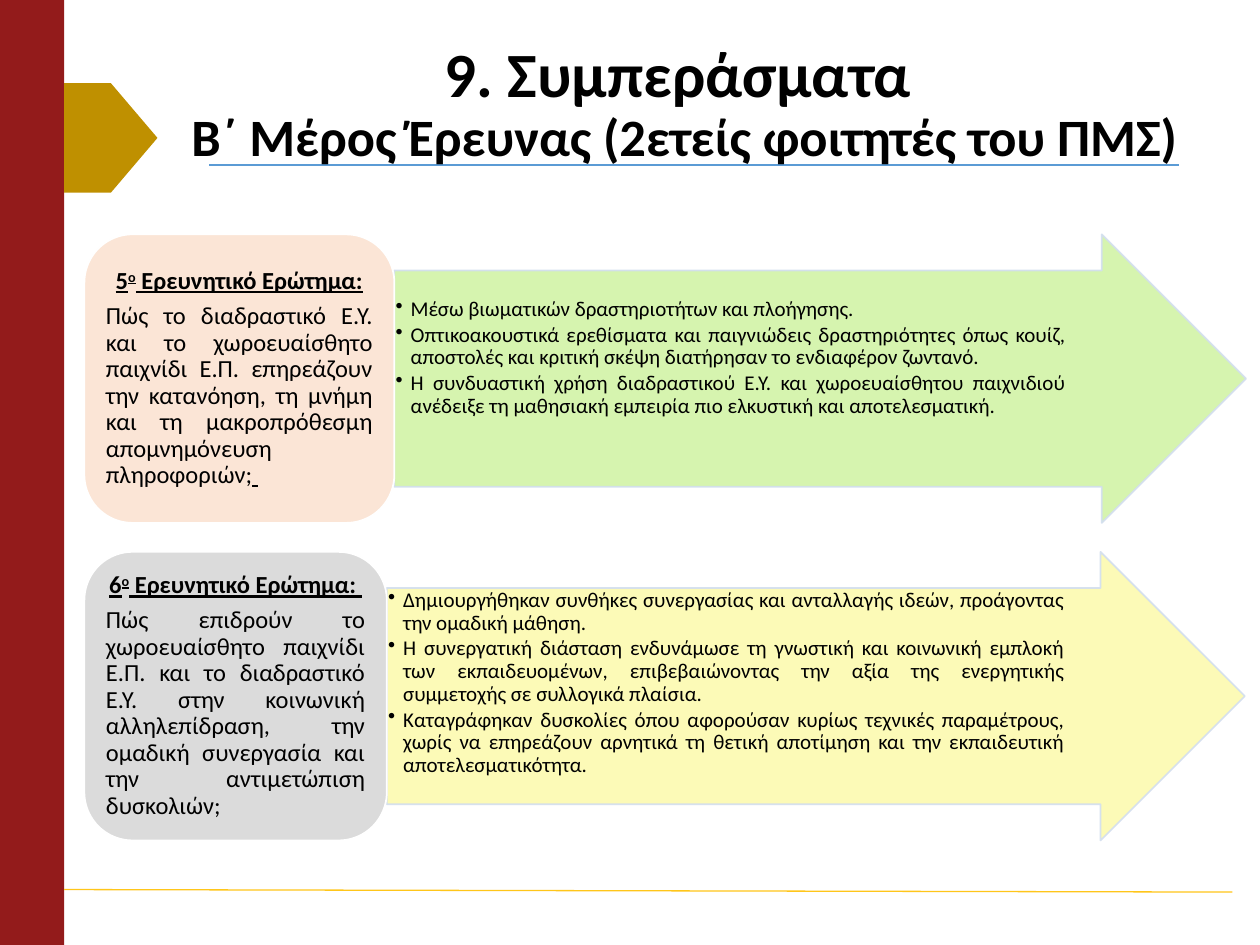
from lxml.etree import SubElement
from pptx import Presentation
from pptx.dml.color import RGBColor
from pptx.enum.shapes import MSO_CONNECTOR, MSO_SHAPE as SHAPE
from pptx.enum.text import MSO_ANCHOR as ANCHOR, PP_ALIGN as ALIGN
from pptx.oxml.ns import qn
from pptx.util import Inches, Pt

WIDTH, HEIGHT = Inches(10), Inches(7.5)
COLS, ROWS = 100, 75
CARD_LEFT, CARD_HEIGHT = 6.7, 22.9
FIRST_ROW, ROW_STEP = 18.6, 25.2

QUESTIONS = [
    {
        "number": "5",
        "heading": " Ερευνητικό Ερώτημα:",
        "question": "Πώς το διαδραστικό Ε.Υ. και το χωροευαίσθητο παιχνίδι Ε.Π. επηρεάζουν την κατανόηση, τη μνήμη και τη μακροπρόθεσμη απομνημόνευση πληροφοριών;",
        "tail": " ",
        "findings": [
            "Μέσω βιωματικών δραστηριοτήτων και πλοήγησης.",
            "Οπτικοακουστικά ερεθίσματα και παιγνιώδεις δραστηριότητες όπως κουίζ, αποστολές και κριτική σκέψη διατήρησαν το ενδιαφέρον ζωντανό.",
            "Η συνδυαστική χρήση διαδραστικού Ε.Υ. και χωροευαίσθητου παιχνιδιού ανέδειξε τη μαθησιακή εμπειρία πιο ελκυστική και αποτελεσματική.",
        ],
        "split": 31.3, "tip": 98.9, "top_inset": 0.22,
        "card": "FBE5D6", "arrow": "D2F3A7",
    },
    {
        "number": "6",
        "heading": " Ερευνητικό Ερώτημα: ",
        "question": "Πώς επιδρούν το χωροευαίσθητο παιχνίδι Ε.Π. και το διαδραστικό Ε.Υ. στην κοινωνική αλληλεπίδραση, την ομαδική συνεργασία και την αντιμετώπιση δυσκολιών;",
        "tail": "",
        "findings": [
            "Δημιουργήθηκαν συνθήκες συνεργασίας και ανταλλαγής ιδεών, προάγοντας την ομαδική μάθηση.",
            "Η συνεργατική διάσταση ενδυνάμωσε τη γνωστική και κοινωνική εμπλοκή των εκπαιδευομένων, επιβεβαιώνοντας την αξία της ενεργητικής συμμετοχής σε συλλογικά πλαίσια.",
            "Καταγράφηκαν δυσκολίες όπου αφορούσαν κυρίως τεχνικές παραμέτρους, χωρίς να επηρεάζουν αρνητικά τη θετική αποτίμηση και την εκπαιδευτική αποτελεσματικότητα.",
        ],
        "split": 30.7, "tip": 98.8, "top_inset": 0.01,
        "card": "DBDBDB", "arrow": "FCFAB0",
    },
]


def col(n):
    return round(WIDTH * n / COLS)


def row(n):
    return round(HEIGHT * n / ROWS)


def box(left, top, width, height):
    return col(left), row(top), col(width), row(height)


def paint(color_format, value, alpha=None):
    color_format.rgb = RGBColor.from_string(value)
    if alpha:
        color = color_format._xFill.find(qn("a:srgbClr"))
        SubElement(color, qn("a:alpha")).set("val", str(alpha * 1000))


def add_block(slide, kind, area, fill, line=None, alpha=None):
    sp = slide.shapes.add_shape(kind, *box(*area))
    sp.shadow.inherit = False
    sp.fill.solid()
    paint(sp.fill.fore_color, fill, alpha)
    if line:
        sp.line.width = Pt(1)
        sp.line.fill.solid()
        paint(sp.line.fill.fore_color, line, alpha)
    else:
        sp.line.fill.background()
    return sp


def add_rule(slide, start, end, color):
    line = slide.shapes.add_connector(
        MSO_CONNECTOR.STRAIGHT, col(start[0]), row(start[1]), col(end[0]), row(end[1]))
    line.line.width = Pt(0.75)
    line.line.fill.solid()
    paint(line.line.fill.fore_color, color)
    SubElement(line._element.spPr, qn("a:effectLst"))


def set_frame(tf, anchor, left, top, right, bottom):
    tf.word_wrap = True
    tf.vertical_anchor = anchor
    tf.margin_left, tf.margin_top = Inches(left), Inches(top)
    tf.margin_right, tf.margin_bottom = Inches(right), Inches(bottom)


def format_run(r, size, bold=False, underline=False):
    r.font.name = "Calibri"
    r.font.size = Pt(size)
    r.font.bold = bold
    r.font.underline = underline
    r.font.fill.solid()
    paint(r.font.fill.fore_color, "000000")


def format_paragraph(p, align, after=0):
    p.alignment = align
    p.line_spacing = 0.9
    p.space_after = Pt(after)


def add_bullet(p):
    pPr = p._p.get_or_add_pPr()
    pPr.set("marL", str(Inches(0.12)))
    pPr.set("indent", str(-Inches(0.12)))
    SubElement(pPr, qn("a:buChar")).set("char", "•")


def add_title(slide):
    tf = slide.shapes.add_textbox(*box(13.8, 6, 81.1, 4.7)).text_frame
    set_frame(tf, ANCHOR.MIDDLE, 0.1, 0.05, 0.1, 0.05)
    tf.text = "9. Συμπεράσματα \vΒ΄ Μέρος Έρευνας (2ετείς φοιτητές του ΠΜΣ)"
    p = tf.paragraphs[0]
    format_paragraph(p, ALIGN.CENTER)
    for r, size in zip(p.runs, (36, 30)):
        format_run(r, size, bold=True)


def add_findings(slide, item, top):
    left = item["split"]
    area = (left, top, item["tip"] - left, CARD_HEIGHT)
    sp = add_block(slide, SHAPE.RIGHT_ARROW, area, item["arrow"], "D2DEEF", 90)
    sp.adjustments[0], sp.adjustments[1] = 0.75, 0.5
    tf = sp.text_frame
    set_frame(tf, ANCHOR.TOP, 0.01, item["top_inset"], 0.57, 0.01)
    tf.text = "\n".join(item["findings"])
    for p in tf.paragraphs:
        format_paragraph(p, ALIGN.JUSTIFY, 1.8)
        add_bullet(p)
        format_run(p.runs[0], 12)


def add_question(slide, item, top):
    area = (CARD_LEFT, top, item["split"] - CARD_LEFT, CARD_HEIGHT)
    tf = add_block(slide, SHAPE.ROUNDED_RECTANGLE, area, item["card"], "FFFFFF").text_frame
    set_frame(tf, ANCHOR.MIDDLE, 0.06, 0.03, 0.06, 0.03)
    tf.text = item["number"] + "\n" + item["question"]
    heading, question = tf.paragraphs
    for text in ("ο", item["heading"]):
        heading.add_run().text = text
    format_paragraph(heading, ALIGN.CENTER, 4.9)
    for r in heading.runs:
        format_run(r, 14, bold=True, underline=True)
    heading.runs[1]._r.get_or_add_rPr().set("baseline", "30000")
    format_paragraph(question, ALIGN.JUSTIFY, 4.9)
    format_run(question.runs[0], 14)
    if item["tail"]:
        r = question.add_run()
        r.text = item["tail"]
        format_run(r, 14, bold=True, underline=True)


def main():
    prs = Presentation()
    prs.slide_width, prs.slide_height = WIDTH, HEIGHT
    slide = prs.slides.add_slide(prs.slide_layouts[6])
    add_block(slide, SHAPE.RECTANGLE, (0, 0, 5.1, ROWS), "931B1B")
    add_rule(slide, (16.6, 13.1), (93.6, 13.1), "5B9BD5")
    add_rule(slide, (5.1, 70.6), (97.8, 70.8), "FFC61A")
    add_block(slide, SHAPE.PENTAGON, (5.1, 6.6, 7.4, 8.7), "BF9000")
    add_title(slide)
    for i, item in enumerate(QUESTIONS):
        top = FIRST_ROW + i * ROW_STEP
        add_findings(slide, item, top)
        add_question(slide, item, top)
    prs.save("out.pptx")


if __name__ == "__main__":
    main()
